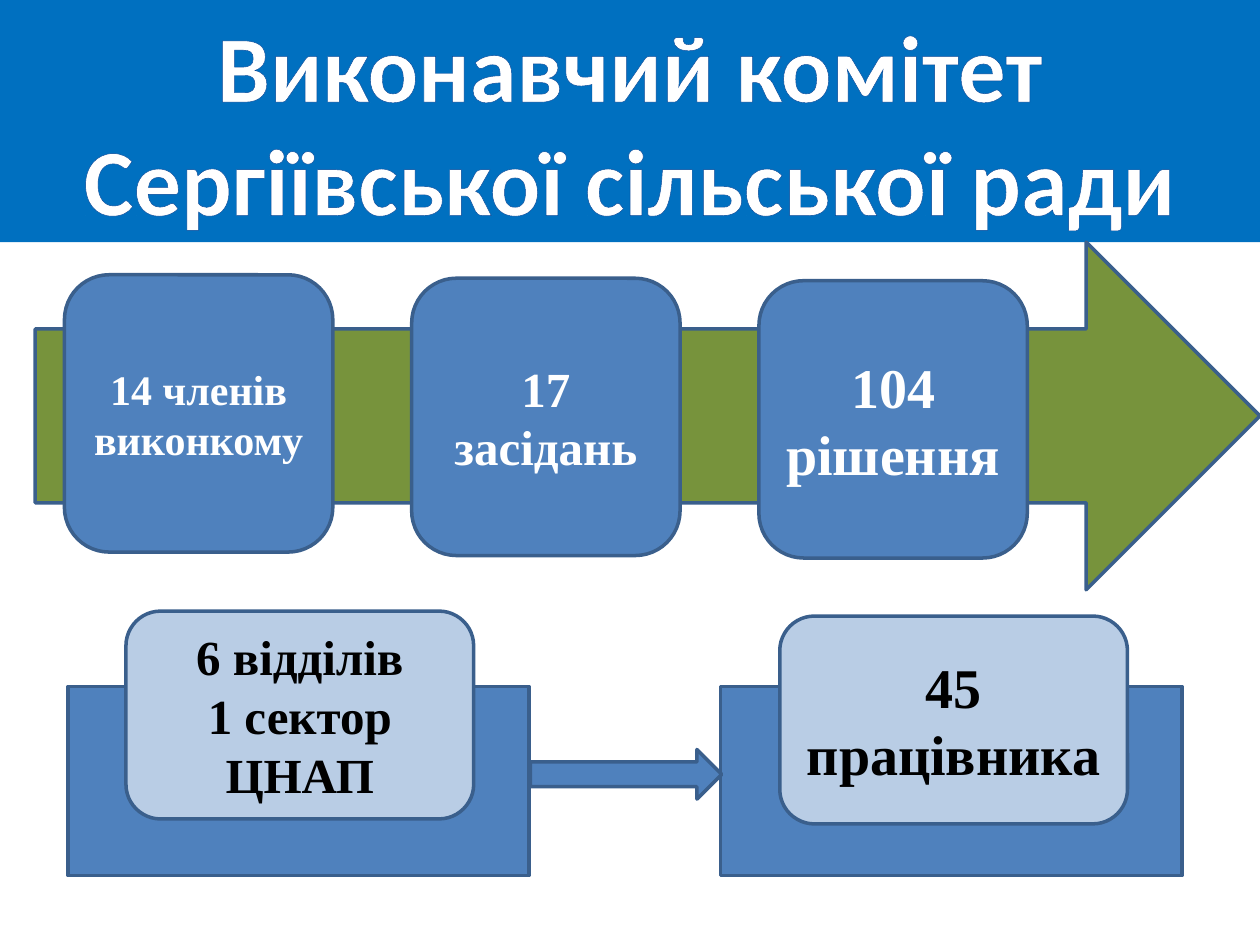
import pptx
import pptx.util
import pptx.dml.color
import pptx.enum.shapes
import pptx.enum.text
import lxml.etree

Cm = pptx.util.Cm
Pt = pptx.util.Pt
Kind = pptx.enum.shapes.MSO_SHAPE
hues = {"banner": "0070C0", "green": "77933C", "blue": "4F81BD", "pale": "B9CDE5",
        "edge": "3A5F8C", "rim": "054697", "white": "FFFFFF", "black": "000000"}


def tint(name):
    return pptx.dml.color.RGBColor.from_string(hues[name])


def write(text, shape, size, font="Times New Roman", color="white"):
    frame = shape.text_frame
    frame.word_wrap = True
    frame.auto_size = pptx.enum.text.MSO_AUTO_SIZE.NONE
    frame.vertical_anchor = pptx.enum.text.MSO_ANCHOR.MIDDLE
    frame.text = text
    for para in frame.paragraphs:
        para.alignment = pptx.enum.text.PP_ALIGN.CENTER
        for run in para.runs:
            run.font.name = font
            run.font.size = Pt(size)
            run.font.bold = True
            run.font.color.rgb = tint(color)


def draw(kind, x, y, w, h, fill):
    shape = slide.shapes.add_shape(kind, Cm(x), Cm(y), Cm(w), Cm(h))
    shape.shadow.inherit = False
    shape.fill.solid()
    shape.fill.fore_color.rgb = tint(fill)
    shape.line.color.rgb = tint("edge")
    shape.line.width = Pt(2)
    return shape


deck = pptx.Presentation()
deck.slide_width = Cm(25.4)
deck.slide_height = Cm(19.05)
slide = deck.slides.add_slide(deck.slide_layouts[5])

title = slide.shapes.title
title.left, title.top, title.width, title.height = Cm(0), Cm(0), Cm(25.4), Cm(4.88)
title.fill.solid()
title.fill.fore_color.rgb = tint("banner")
write("Виконавчий комітет Сергіївської сільської ради", title, size=54, font="Calibri")
space = "http://schemas.openxmlformats.org/drawingml/2006/main"
rim = lxml.etree.fromstring(
    f'<a:ln xmlns:a="{space}" w="12700"><a:solidFill>'
    f'<a:srgbClr val="{hues["rim"]}"/></a:solidFill></a:ln>')
title.text_frame.paragraphs[0].runs[0].font._element.insert(0, rim)

draw(Kind.RIGHT_ARROW, 0.71, 4.88, 24.69, 7.01, "green")

facts = [("14 членів виконкому", 5.54, 24), ("17 засідань", 5.61, 28), ("104 рішення", 5.66, 32)]
for i, (text, y, size) in enumerate(facts):
    card = draw(Kind.ROUNDED_RECTANGLE, 1.3 + 7 * i, y, 5.41, 5.59, "blue")
    write(text, card, size=size)

staff = [("6 відділів\n1 сектор\nЦНАП", 1.37, 2.54, 12.32, 28),
         ("45 працівника", 14.53, 15.72, 12.42, 32)]
for text, base, x, y, size in staff:
    draw(Kind.RECTANGLE, base, 13.84, 9.3, 3.81, "blue")
    card = draw(Kind.ROUNDED_RECTANGLE, x, y, 7.01, 4.19, "pale")
    write(text, card, size=size, color="black")

draw(Kind.RIGHT_ARROW, 10.69, 15.11, 3.86, 1, "blue")

deck.save("out.pptx")
